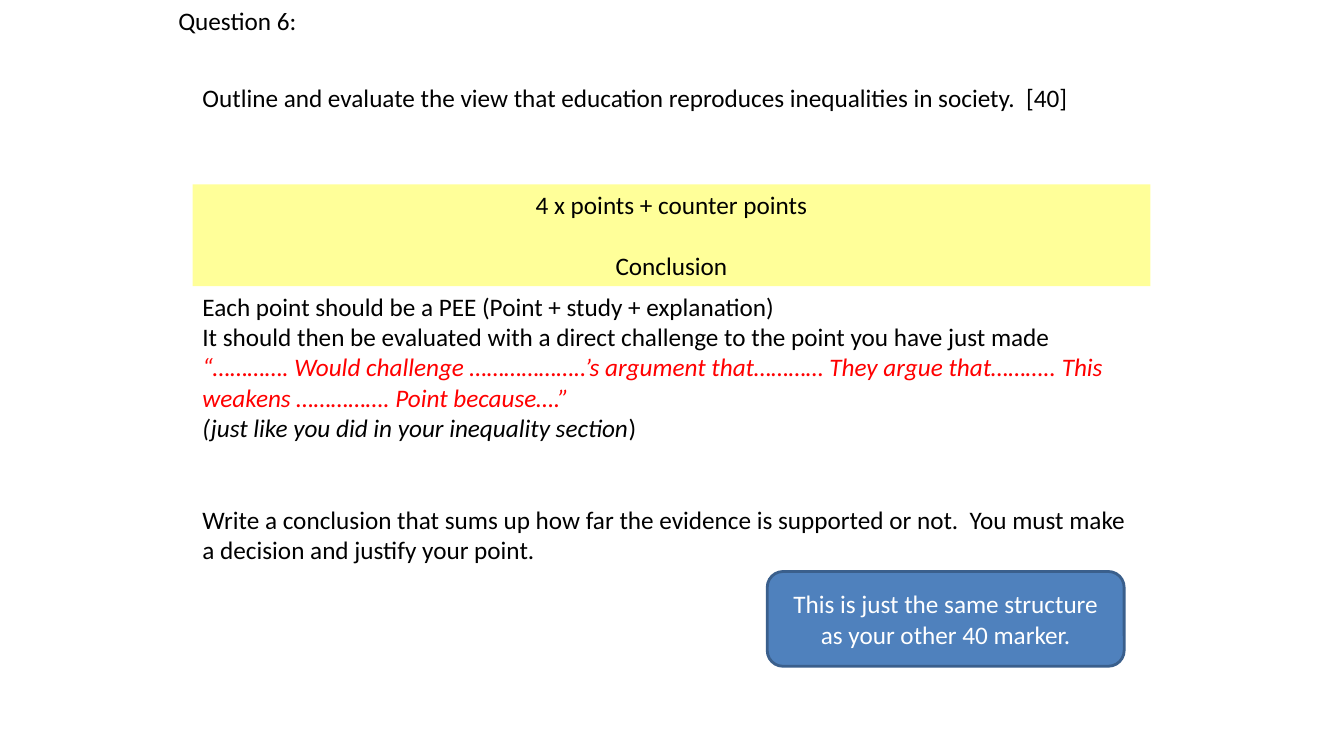
from pptx import Presentation
from pptx.dml.color import RGBColor
from pptx.enum.shapes import MSO_SHAPE
from pptx.enum.text import MSO_ANCHOR, PP_ALIGN
from pptx.util import Inches, Pt

RECTANGLE, ROUNDED = MSO_SHAPE.RECTANGLE, MSO_SHAPE.ROUNDED_RECTANGLE
LEFT, CENTER = PP_ALIGN.LEFT, PP_ALIGN.CENTER
TOP, MIDDLE = MSO_ANCHOR.TOP, MSO_ANCHOR.MIDDLE
COLORS = {"black": "000000", "white": "FFFFFF", "red": "FF0000",
          "yellow": "FFFF99", "blue": "4F81BD", "navy": "3A5F8C"}
LINE_HEIGHT = 22  # points, one line of 18 pt Calibri


def color(name):
    return RGBColor.from_string(COLORS[name])


def write(shape, paragraphs, align=LEFT, anchor=TOP):
    """Fill a shape with (lines skipped before, [(text, colour, italic), ...])."""
    frame = shape.text_frame
    frame.word_wrap = True
    frame.vertical_anchor = anchor
    for index, (skipped, runs) in enumerate(paragraphs):
        paragraph = frame.add_paragraph() if index else frame.paragraphs[0]
        paragraph.alignment = align
        paragraph.space_before = Pt(skipped * LINE_HEIGHT)
        for text, ink, italic in runs:
            run = paragraph.add_run()
            run.text = text
            run.font.name = "Calibri"
            run.font.size = Pt(18)
            run.font.italic = italic
            run.font.color.rgb = color(ink)


prs = Presentation()
prs.slide_width, prs.slide_height = Inches(13.33), Inches(7.5)
slide = prs.slides.add_slide(prs.slide_layouts[6])
shapes = slide.shapes

# Question and title
question_number = shapes.add_textbox(Inches(1.67), Inches(0), Inches(3.66), Inches(0.4))
write(question_number, [(0, [("Question 6:", "black", False)])])

question = shapes.add_textbox(Inches(1.91), Inches(0.77), Inches(9.59), Inches(0.4))
write(question, [(0, [(
    "Outline and evaluate the view that education reproduces inequalities in society.  [40]",
    "black", False)])])

# Essay structure
structure = shapes.add_shape(RECTANGLE, Inches(1.91), Inches(1.83), Inches(9.5), Inches(1.01))
structure.shadow.inherit = False
structure.fill.solid()
structure.fill.fore_color.rgb = color("yellow")
structure.line.fill.background()
write(structure, [
    (0, [("4 x points + counter points", "black", False)]),
    (1, [("Conclusion", "black", False)]),
], CENTER)

# Guidance
guidance = shapes.add_textbox(Inches(1.91), Inches(2.84), Inches(9.5), Inches(2.83))
write(guidance, [
    (0, [("Each point should be a PEE (Point + study + explanation)", "black", False)]),
    (0, [("It should then be evaluated with a direct challenge to the point you have just made",
          "black", False)]),
    (0, [("“…………. Would challenge ………………..’s argument that………… They argue that……….. "
          "This weakens ……………. Point because….”", "red", True)]),
    (0, [("(just like you did in your inequality section", "black", True),
         (")", "black", False)]),
    (2, [("Write a conclusion that sums up how far the evidence is supported or not.  "
          "You must make a decision and justify your point.", "black", False)]),
])

# Reminder
reminder = shapes.add_shape(ROUNDED, Inches(7.61), Inches(5.67), Inches(3.54), Inches(0.94))
reminder.shadow.inherit = False
reminder.fill.solid()
reminder.fill.fore_color.rgb = color("blue")
reminder.line.color.rgb = color("navy")
reminder.line.width = Pt(2)
write(reminder, [(0, [("This is just the same structure as your other 40 marker.",
                       "white", False)])], CENTER, MIDDLE)

prs.save("out.pptx")
